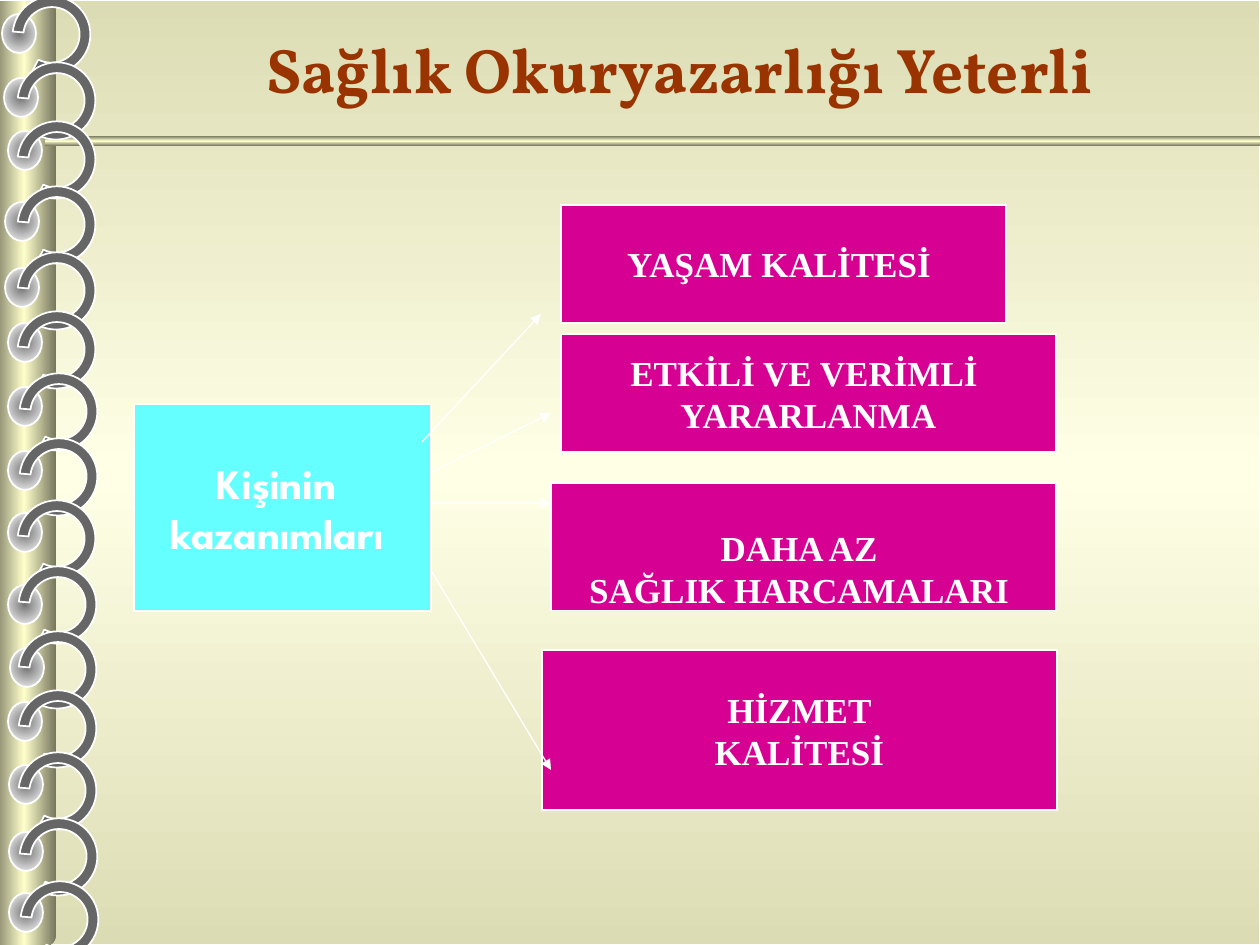
import dataclasses
import typing

import pptx
import pptx.dml.color
import pptx.enum.shapes
import pptx.enum.text
import pptx.oxml
import pptx.oxml.ns
import pptx.util

EMU_PER_PX = 914400 // 126
SHAPES = pptx.enum.shapes.MSO_SHAPE
WHITE = "FFFFFF"
MAGENTA = "D60093"
METAL = ("76765E", "FFFFCC", "76765E")


class Area(typing.NamedTuple):
    left: int
    top: int
    width: int
    height: int


class Arrow(typing.NamedTuple):
    start_x: int
    start_y: int
    end_x: int
    end_y: int


@dataclasses.dataclass
class Label:
    area: Area
    lines: tuple[str, ...]
    fill: str = MAGENTA
    font: str = "Times New Roman"
    size: int = 20
    top_inset: int = 6
    bottom_inset: int = 6


HOLES = (
    (2, 14), (4, 78), (8, 131), (5, 202), (5, 268),
    (8, 323), (8, 387), (8, 451), (8, 513), (8, 585),
    (10, 648), (8, 702), (9, 765), (9, 832), (9, 893),
)
RINGS = (
    (13, -4), (18, 62), (18, 121), (18, 186), (18, 252),
    (18, 311), (20, 373), (20, 438), (18, 500), (19, 566),
    (19, 631), (19, 690), (19, 752), (20, 818), (21, 881),
)
LABELS = (
    Label(Area(134, 404, 297, 207), ("Kişinin ", "kazanımları "),
          "66FFFF", "League Spartan", 24),
    Label(Area(561, 205, 445, 118), ("YAŞAM KALİTESİ ",)),
    Label(Area(561, 334, 495, 118), ("ETKİLİ VE VERİMLİ ", "YARARLANMA")),
    Label(Area(551, 483, 505, 128), ("DAHA AZ ", "SAĞLIK HARCAMALARI "),
          top_inset=44, bottom_inset=0),
    Label(Area(542, 650, 515, 160), ("HİZMET", "KALİTESİ")),
)
ARROWS = (
    Arrow(432, 503, 551, 503),
    Arrow(432, 472, 551, 413),
    Arrow(422, 442, 541, 314),
    Arrow(432, 572, 551, 770),
)


def px(length: int) -> int:
    return pptx.util.Emu(length * EMU_PER_PX)


def color(value: str) -> pptx.dml.color.RGBColor:
    return pptx.dml.color.RGBColor.from_string(value)


def outline(shape, width: float) -> None:
    shape.line.color.rgb = color(WHITE)
    shape.line.width = pptx.util.Pt(width)


def add_shape(page, kind, area: Area, fill: str | None = None, line_width: float = 0):
    shape = page.shapes.add_shape(kind, *map(px, area))
    shape.shadow.inherit = False
    if fill:
        shape.fill.solid()
        shape.fill.fore_color.rgb = color(fill)
    else:
        shape.fill.background()
    if line_width:
        outline(shape, line_width)
    else:
        shape.line.fill.background()
    return shape


def set_gradient(shape, colors: tuple[str, ...], angle: int | None) -> None:
    step = 100000 // (len(colors) - 1)
    stops = "".join(
        f'<a:gs pos="{index * step}"><a:srgbClr val="{value}"/></a:gs>'
        for index, value in enumerate(colors)
    )
    if angle is None:
        direction = ('<a:path path="circle"><a:fillToRect l="50000" t="50000" '
                     'r="50000" b="50000"/></a:path>')
    else:
        direction = f'<a:lin ang="{angle * 60000}" scaled="0"/>'
    gradient = pptx.oxml.parse_xml(
        f'<a:gradFill {pptx.oxml.ns.nsdecls("a")} rotWithShape="1">'
        f"<a:gsLst>{stops}</a:gsLst>{direction}</a:gradFill>"
    )
    properties = shape.element.spPr
    properties.replace(properties.find(pptx.oxml.ns.qn("a:noFill")), gradient)


def write_lines(shape, lines: tuple[str, ...], font: str, size: int, text_color: str) -> None:
    frame = shape.text_frame
    frame.vertical_anchor = pptx.enum.text.MSO_ANCHOR.MIDDLE
    frame.text = "\n".join(lines)
    for para in frame.paragraphs:
        para.alignment = pptx.enum.text.PP_ALIGN.CENTER
        for span in para.runs:
            span.font.name = font
            span.font.size = pptx.util.Pt(size)
            span.font.bold = True
            span.font.color.rgb = color(text_color)


def draw_notebook(page) -> None:
    paper = add_shape(page, SHAPES.RECTANGLE, Area(0, 0, 1260, 945), line_width=1)
    set_gradient(paper, ("DCDCB4", "FFFFE6", "DCDCB4"), 90)
    spine = add_shape(page, SHAPES.ROUNDED_RECTANGLE, Area(-8, 1, 64, 945))
    set_gradient(spine, METAL, 0)
    rule = add_shape(page, SHAPES.ROUNDED_RECTANGLE, Area(648, -467, 10, 1216))
    rule.rotation = 90
    set_gradient(rule, METAL, 0)
    for left, top in HOLES:
        hole = add_shape(page, SHAPES.OVAL, Area(left, top, 34, 39), line_width=1)
        set_gradient(hole, ("767676", WHITE), None)
    for left, top in RINGS:
        ring = add_shape(page, SHAPES.BLOCK_ARC, Area(left, top, 77, 78), "666666", 1)
        ring.rotation = 60
        for index, value in enumerate((125 * 0.6, 58 * 0.6, 0.14)):
            ring.adjustments[index] = value


def draw_title(page) -> None:
    box = page.shapes.add_textbox(*map(px, Area(158, 0, 1043, 137)))
    box.text_frame.word_wrap = True
    write_lines(box, ("Sağlık Okuryazarlığı Yeterli",), "Vollkorn", 36, "993300")


def draw_label(page, label: Label) -> None:
    box = add_shape(page, SHAPES.RECTANGLE, label.area, label.fill, 0.75)
    frame = box.text_frame
    frame.word_wrap = False
    frame.margin_top = px(label.top_inset)
    frame.margin_bottom = px(label.bottom_inset)
    write_lines(box, label.lines, label.font, label.size, WHITE)


def draw_arrow(page, arrow: Arrow) -> None:
    connector = page.shapes.add_connector(
        pptx.enum.shapes.MSO_CONNECTOR.STRAIGHT, *map(px, arrow)
    )
    outline(connector, 0.75)
    properties = connector.element.spPr
    line = properties.find(pptx.oxml.ns.qn("a:ln"))
    namespace = pptx.oxml.ns.nsdecls("a")
    line.append(pptx.oxml.parse_xml(f'<a:tailEnd {namespace} type="triangle"/>'))
    properties.append(pptx.oxml.parse_xml(f"<a:effectLst {namespace}/>"))


def main() -> None:
    deck = pptx.Presentation()
    deck.slide_width = px(1260)
    deck.slide_height = px(945)
    page = deck.slides.add_slide(deck.slide_layouts[6])
    draw_notebook(page)
    draw_title(page)
    for label in LABELS:
        draw_label(page, label)
    for arrow in ARROWS:
        draw_arrow(page, arrow)
    deck.save("out.pptx")


if __name__ == "__main__":
    main()
